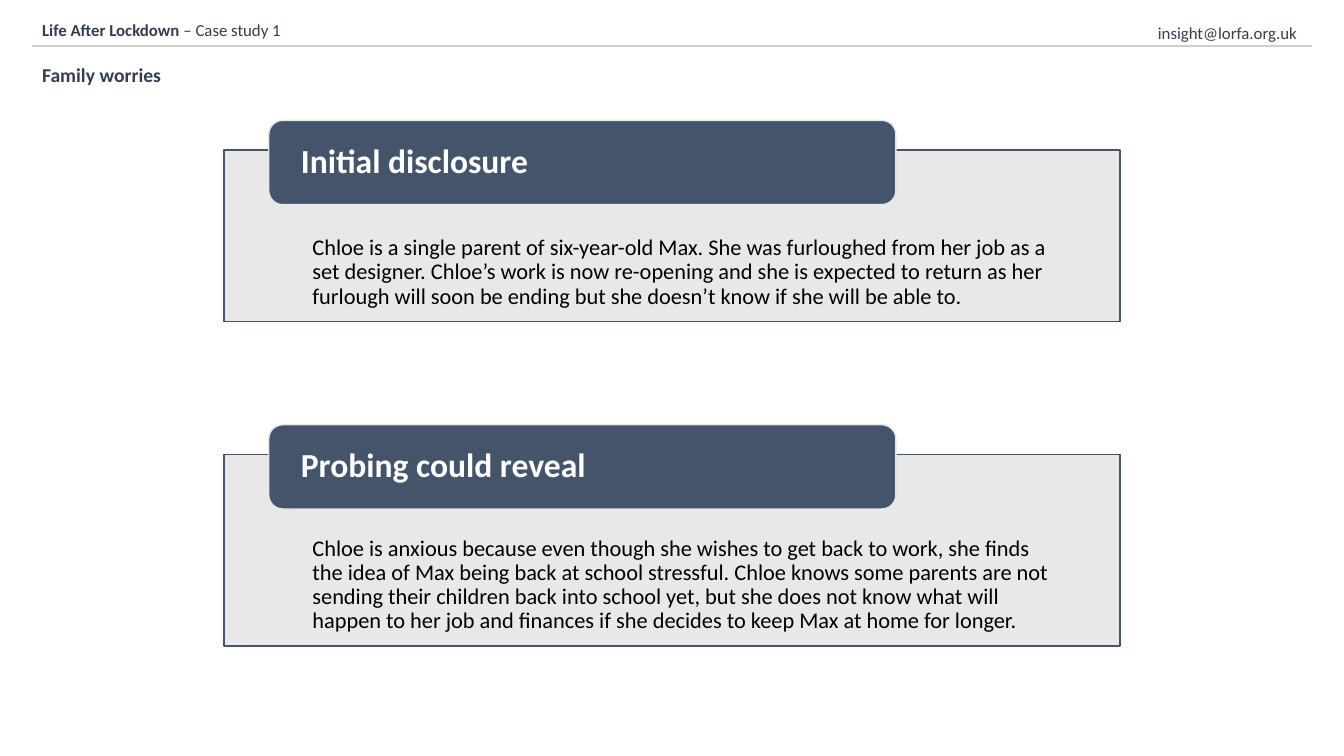
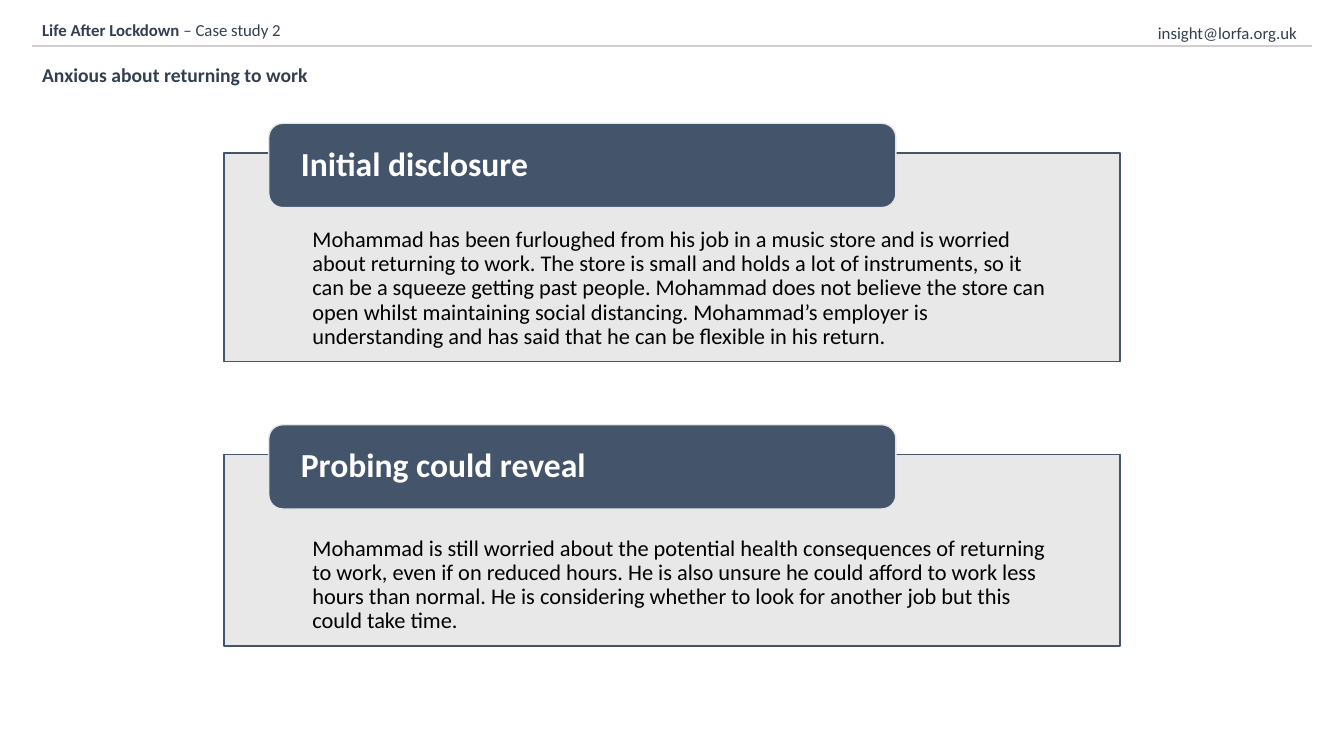
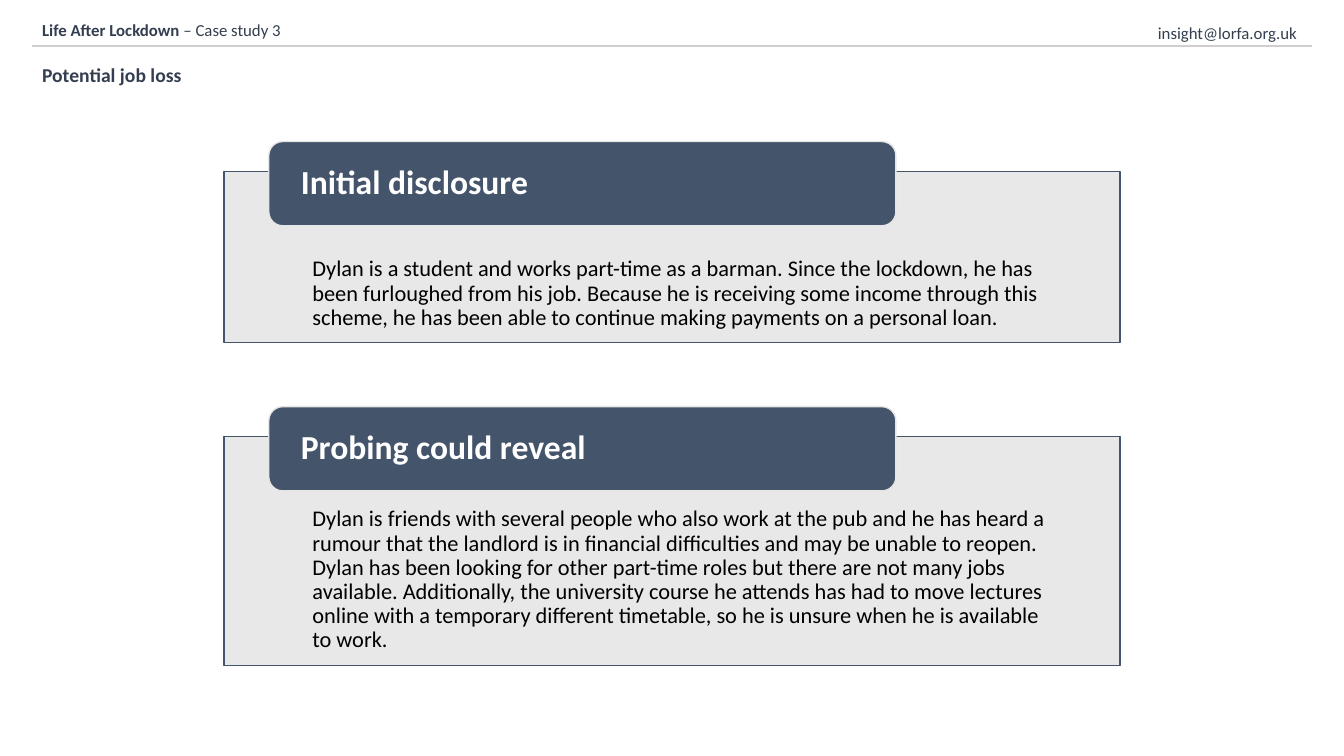
from dataclasses import dataclass

from pptx import Presentation
from pptx.dml.color import RGBColor
from pptx.enum.shapes import MSO_CONNECTOR as Connector, MSO_SHAPE as Preset
from pptx.enum.text import MSO_ANCHOR as Anchor, PP_ALIGN as Align
from pptx.oxml.ns import qn
from pptx.util import Pt

FONT = "Calibri"
INK, NAVY, GREY = "333F50", "44546A", "E7E6E6"
RULE, BLACK, WHITE = "D0CECE", "000000", "FFFFFF"

MARGIN, RULE_Y, RULE_RIGHT = 23, 33.1, 937
PANEL_LEFT, PANEL_WIDTH = 160, 640
TAB_INDENT, TAB_WIDTH, TAB_HEIGHT, TAB_RISE = 32, 448, 60.2, 21.3


@dataclass(frozen=True)
class Panel:
    heading: str
    top: float
    height: float
    body: str


@dataclass(frozen=True)
class CaseStudy:
    subtitle: str
    subtitle_width: float
    panels: tuple[Panel, Panel]


CASES = (
    CaseStudy("Family worries", 117.4, (
        Panel("Initial disclosure", 107.3, 122.4,
              "Chloe is a single parent of six-year-old Max. She was furloughed from her job "
              "as a set designer. Chloe’s work is now re-opening and she is expected to return "
              "as her furlough will soon be ending but she doesn’t know if she will be able to."),
        Panel("Probing could reveal", 324.7, 136.8,
              "Chloe is anxious because even though she wishes to get back to work, she finds "
              "the idea of Max being back at school stressful. Chloe knows some parents are not "
              "sending their children back into school yet, but she does not know what will "
              "happen to her job and finances if she decides to keep Max at home for longer."),
    )),
    CaseStudy("Anxious about returning to work", 213.8, (
        Panel("Initial disclosure", 109.4, 149,
              "Mohammad has been furloughed from his job in a music store and is worried about "
              "returning to work. The store is small and holds a lot of instruments, so it can "
              "be a squeeze getting past people. Mohammad does not believe the store can open "
              "whilst maintaining social distancing. Mohammad’s employer is understanding and "
              "has said that he can be flexible in his return."),
        Panel("Probing could reveal", 324.7, 136.8,
              "Mohammad is still worried about the potential health consequences of returning "
              "to work, even if on reduced hours. He is also unsure he could afford to work less "
              "hours than normal. He is considering whether to look for another job but this "
              "could take time."),
    )),
    CaseStudy("Potential job loss", 136.8, (
        Panel("Initial disclosure", 122.4, 122.4,
              "Dylan is a student and works part-time as a barman. Since the lockdown, he has "
              "been furloughed from his job. Because he is receiving some income through this "
              "scheme, he has been able to continue making payments on a personal loan."),
        Panel("Probing could reveal", 311.8, 163.4,
              "Dylan is friends with several people who also work at the pub and he has heard a "
              "rumour that the landlord is in financial difficulties and may be unable to "
              "reopen. Dylan has been looking for other part-time roles but there are not many "
              "jobs available. Additionally, the university course he attends has had to move "
              "lectures online with a temporary different timetable, so he is unsure when he is "
              "available to work."),
    )),
)


def rgb(color: str) -> RGBColor:
    return RGBColor.from_string(color)


def style_paragraph(p, size: float, color: str, bold: bool | None = None,
                    spacing: float = 1.0) -> None:
    p.alignment = Align.LEFT
    p.line_spacing = spacing
    p.font.name = FONT
    p.font.size = Pt(size)
    p.font.color.rgb = rgb(color)
    p.font.bold = bold


def add_label(s, left: float, top: float, width: float, height: float, size: float,
              runs: list[tuple[str, bool]], spacing: float = 1.0) -> None:
    """Add a text box made of (text, bold) runs."""
    tf = s.shapes.add_textbox(Pt(left), Pt(top), Pt(width), Pt(height)).text_frame
    tf.word_wrap = True
    p = tf.paragraphs[0]
    style_paragraph(p, size, INK, spacing=spacing)
    for text, bold in runs:
        r = p.add_run()
        r.text = text
        r.font.bold = bold


def add_block(s, preset, left: float, top: float, width: float, height: float,
              fill: str, line: str):
    sp = s.shapes.add_shape(preset, Pt(left), Pt(top), Pt(width), Pt(height))
    sp.shadow.inherit = False
    sp.fill.solid()
    sp.fill.fore_color.rgb = rgb(fill)
    sp.line.color.rgb = rgb(line)
    sp.line.width = Pt(1)
    return sp


def write_block(sp, text: str, size: float, color: str, bold: bool, anchor,
                left: float, right: float, bottom: float) -> None:
    """Fill a shape with one paragraph, inset by the given margins."""
    tf = sp.text_frame
    tf.word_wrap = True
    tf.vertical_anchor = anchor
    tf.margin_left, tf.margin_right = Pt(left), Pt(right)
    tf.margin_top, tf.margin_bottom = Pt(0), Pt(bottom)
    tf.text = text
    style_paragraph(tf.paragraphs[0], size, color, bold, spacing=0.9)


def set_opacity(sp, percent: int) -> None:
    color = sp.fill._xPr.find(qn("a:solidFill"))[0]
    alpha = color.makeelement(qn("a:alpha"), {"val": str(percent * 1000)})
    color.append(alpha)


def add_panel(s, panel: Panel) -> None:
    box = add_block(s, Preset.RECTANGLE, PANEL_LEFT, panel.top, PANEL_WIDTH, panel.height,
                    GREY, NAVY)
    set_opacity(box, 90)
    write_block(box, panel.body, 16, BLACK, False, Anchor.BOTTOM, 63.2, 49.7, 9)
    tab = add_block(s, Preset.ROUNDED_RECTANGLE, PANEL_LEFT + TAB_INDENT,
                    panel.top - TAB_RISE, TAB_WIDTH, TAB_HEIGHT, NAVY, GREY)
    write_block(tab, panel.heading, 24, WHITE, True, Anchor.MIDDLE, 20, 20, 0)


def add_header(s, number: int, case: CaseStudy) -> None:
    add_label(s, MARGIN, 10.8, 433.4, 21.8, 12,
              [("Life After Lockdown ", True), (f"– Case study {number}", False)])
    rule = s.shapes.add_connector(Connector.STRAIGHT, Pt(MARGIN), Pt(RULE_Y),
                                  Pt(RULE_RIGHT), Pt(RULE_Y))
    rule.line.color.rgb = rgb(RULE)
    rule.line.width = Pt(1.5)
    props = rule._element.spPr
    props.append(props.makeelement(qn("a:effectLst"), {}))
    add_label(s, 820, 5.8, 117.4, 26.6, 12, [("insight@lorfa.org.uk", False)], 1.5)
    add_label(s, MARGIN, RULE_Y, case.subtitle_width, 30.2, 14, [(case.subtitle, True)], 1.5)


def main() -> None:
    prs = Presentation()
    prs.slide_width, prs.slide_height = Pt(960), Pt(540)
    blank = prs.slide_layouts[6]
    for number, case in enumerate(CASES, start=1):
        s = prs.slides.add_slide(blank)
        add_header(s, number, case)
        for panel in case.panels:
            add_panel(s, panel)
    prs.save("out.pptx")


if __name__ == "__main__":
    main()
